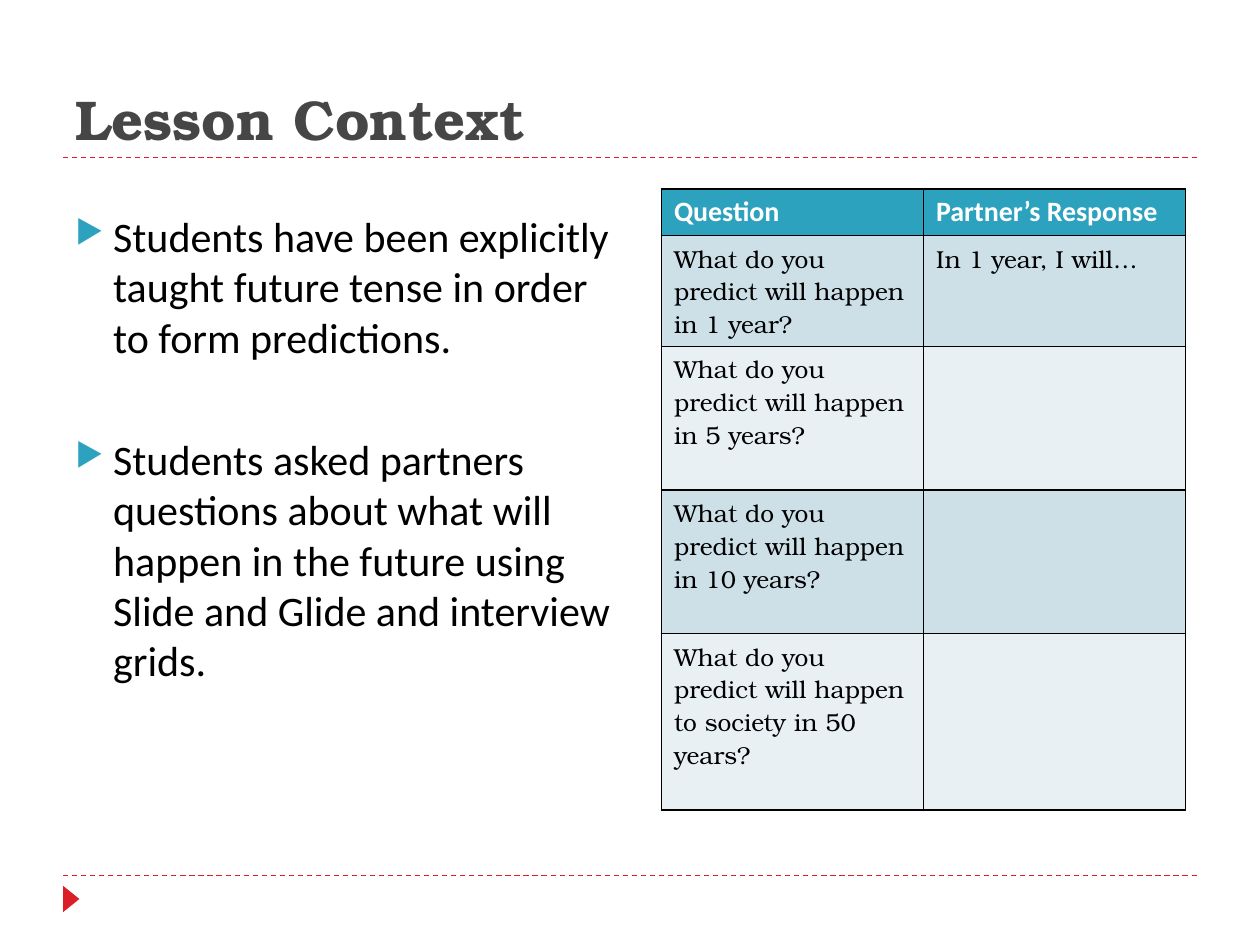
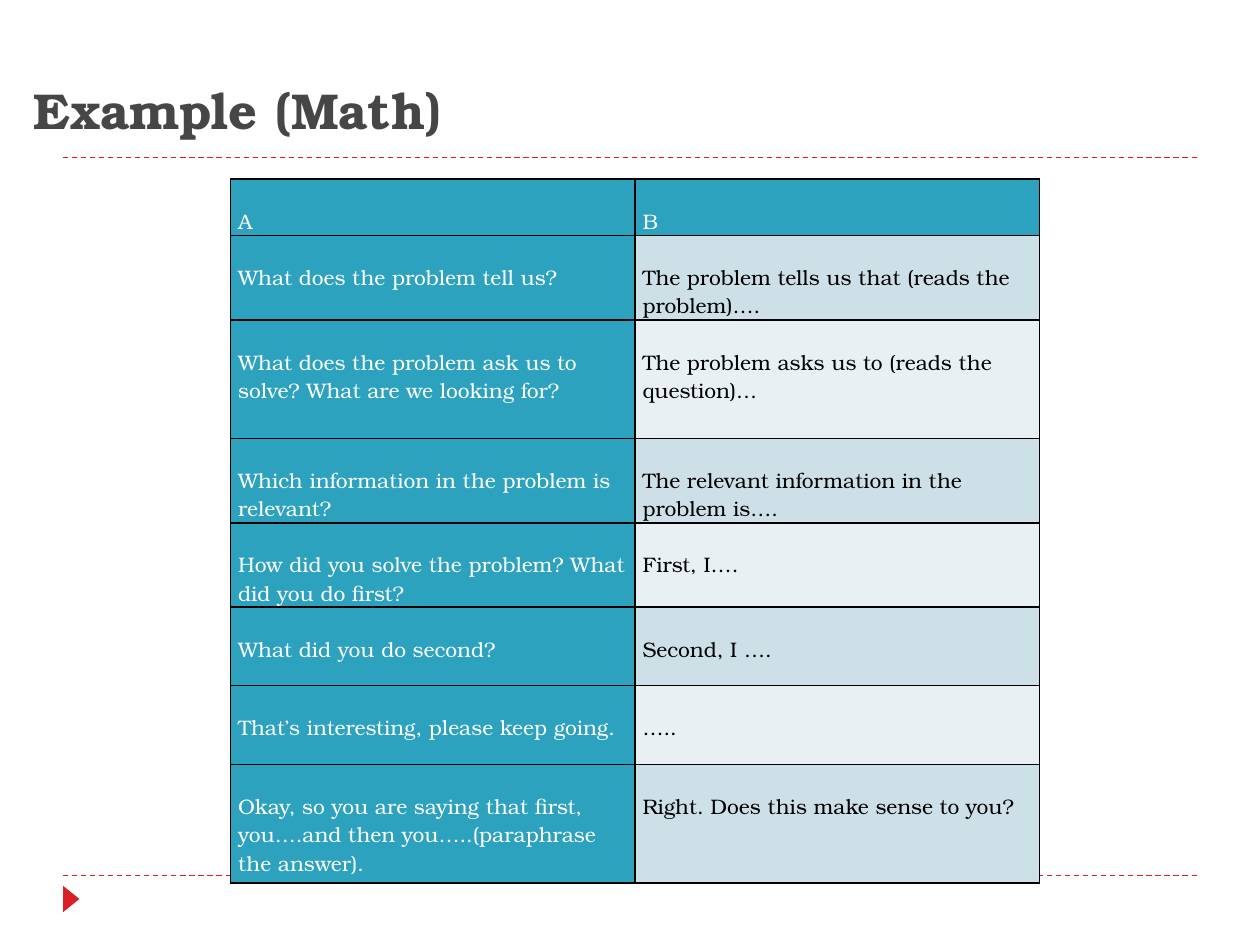
from lxml.etree import SubElement
from pptx import Presentation
from pptx.dml.color import RGBColor
from pptx.enum.dml import MSO_LINE
from pptx.enum.shapes import MSO_CONNECTOR, MSO_SHAPE
from pptx.enum.text import MSO_ANCHOR
from pptx.oxml.ns import qn
from pptx.util import Inches, Pt

RED = RGBColor(0xDA, 0x1F, 0x28)
TEAL = RGBColor(0x2D, 0xA2, 0xBF)
PALE_BLUE = RGBColor(0xCD, 0xE0, 0xE8)
PALE_GREY = RGBColor(0xE8, 0xF0, 0xF4)
TITLE_GREY = RGBColor(0x46, 0x46, 0x46)
BLACK = RGBColor(0x00, 0x00, 0x00)
WHITE = RGBColor(0xFF, 0xFF, 0xFF)
SERIF = "TeX Gyre Bonum"
SANS = "Calibri"

CONTEXT_POINTS = [
    "Students have been explicitly taught future tense in order to form predictions.",
    "Students asked partners questions about what will happen in the future "
    "using Slide and Glide and interview grids.",
]
INTERVIEW_GRID = [
    ("Question", "Partner’s Response"),
    ("What do you predict will happen in 1 year?", "In 1 year, I will…"),
    ("What do you predict will happen in 5 years?", ""),
    ("What do you predict will happen in 10 years?", ""),
    ("What do you predict will happen to society in 50 years?", ""),
]
MATH_DIALOGUE = [
    ("A", "B"),
    ("What does the problem tell us?",
     "The problem tells us that (reads the problem)…."),
    ("What does the problem ask us to solve? What are we looking for?",
     "The problem asks us to (reads the question)…"),
    ("Which information in the problem is relevant?",
     "The relevant information in the problem is…."),
    ("How did you solve the problem? What did you do first?", "First, I…."),
    ("What did you do second?", "Second, I …."),
    ("That’s interesting, please keep going.", "….."),
    ("Okay, so you are saying that first, you….and then you…..(paraphrase the answer).",
     "Right. Does this make sense to you?"),
]


def write(paragraph, text, **font_values):
    run = paragraph.add_run()
    run.text = text
    color = font_values.pop("color")
    for attribute, value in font_values.items():
        setattr(run.font, attribute, value)
    run.font.color.rgb = color


def add_grid(slide, left, top, column_width, row_heights, rows, size,
             header_font, header_bold, teal_first_column, margins):
    """Add a two-column table with a teal header, banded rows and black borders."""
    table = slide.shapes.add_table(
        len(rows), 2, Inches(left), Inches(top),
        Inches(2 * column_width), Inches(sum(row_heights))).table
    table.first_row = table.horz_banding = False
    for column in table.columns:
        column.width = Inches(column_width)
    for r, (height, texts) in enumerate(zip(row_heights, rows)):
        table.rows[r].height = Inches(height)
        for c, text in enumerate(texts):
            cell = table.cell(r, c)
            for side, inset in margins.items():
                setattr(cell, f"margin_{side}", Inches(inset))
            is_teal = r == 0 or (teal_first_column and c == 0)
            properties = cell._tc.get_or_add_tcPr()
            for edge in ("a:lnL", "a:lnR", "a:lnT", "a:lnB"):
                border = SubElement(properties, qn(edge), w=str(Pt(1)))
                fill = SubElement(border, qn("a:solidFill"))
                SubElement(fill, qn("a:srgbClr"), val=str(BLACK))
            cell.fill.solid()
            cell.fill.fore_color.rgb = (
                TEAL if is_teal else PALE_BLUE if r % 2 else PALE_GREY)
            if text:
                write(cell.text_frame.paragraphs[0], text,
                      size=Pt(size + 2 if header_bold and r == 0 else size),
                      name=header_font if r == 0 else SERIF,
                      bold=header_bold and r == 0,
                      color=WHITE if is_teal else BLACK)


prs = Presentation()
prs.slide_width, prs.slide_height = Inches(10), Inches(7.5)

# Title, dashed rules and corner marker on each slide
TITLES = [
    ("Lesson Context", 32, (0.5, 0.17, 9, 1.08)),
    ("Example (Math)", 28.8, (0.17, 0.58, 5.08, 0.58)),
]
slides = []
for title, title_size, title_box in TITLES:
    slide = prs.slides.add_slide(prs.slide_layouts[6])
    slides.append(slide)
    for y in (6.95, 1.25):
        rule = slide.shapes.add_connector(
            MSO_CONNECTOR.STRAIGHT, Inches(0.5), Inches(y), Inches(9.5), Inches(y))
        rule.line.color.rgb = RED
        rule.line.width = Pt(0.75)
        rule.line.dash_style = MSO_LINE.DASH
        SubElement(rule._element.spPr, qn("a:effectLst"))
    marker = slide.shapes.add_shape(
        MSO_SHAPE.ISOSCELES_TRIANGLE, Inches(0.46), Inches(7.07), Inches(0.21), Inches(0.13))
    marker.rotation = 90
    marker.shadow.inherit = False
    marker.fill.solid()
    marker.fill.fore_color.rgb = RED
    marker.line.fill.background()
    heading = slide.shapes.add_textbox(*map(Inches, title_box)).text_frame
    heading.word_wrap = True
    heading.vertical_anchor = MSO_ANCHOR.BOTTOM
    write(heading.paragraphs[0], title, size=Pt(title_size), name=SERIF,
          bold=True, color=TITLE_GREY)

context_slide, math_slide = slides

# Lesson context: bullets and interview grid
context = context_slide.shapes.add_textbox(
    Inches(0.5), Inches(1.62), Inches(4.5), Inches(4.21)).text_frame
context.word_wrap = True
for i, point in enumerate(CONTEXT_POINTS):
    paragraph = context.add_paragraph() if i else context.paragraphs[0]
    paragraph.space_before = Pt(41 if i else 6)
    properties = paragraph._p.get_or_add_pPr()
    properties.set("marL", str(Inches(0.3)))
    properties.set("indent", str(-Inches(0.3)))
    bullet_color = SubElement(properties, qn("a:buClr"))
    SubElement(bullet_color, qn("a:srgbClr"), val=str(TEAL))
    SubElement(properties, qn("a:buSzPct"), val="76000")
    SubElement(properties, qn("a:buChar"), char="▶")
    write(paragraph, point, size=Pt(24), name=SANS, color=BLACK)

add_grid(context_slide, 5.25, 1.5, 2.08, [0.37, 0.88, 1.14, 1.14, 1.4],
         INTERVIEW_GRID, size=14, header_font=SANS, header_bold=True,
         teal_first_column=False, margins={})

# Math example: dialogue between partners A and B
add_grid(math_slide, 1.83, 1.42, 3.21, [0.45, 0.67, 0.94, 0.67, 0.67, 0.62, 0.63, 0.94],
         MATH_DIALOGUE, size=12, header_font=SERIF, header_bold=False,
         teal_first_column=True,
         margins={"left": 0.06, "right": 0.06, "top": 0.22, "bottom": 0})

prs.save("out.pptx")
